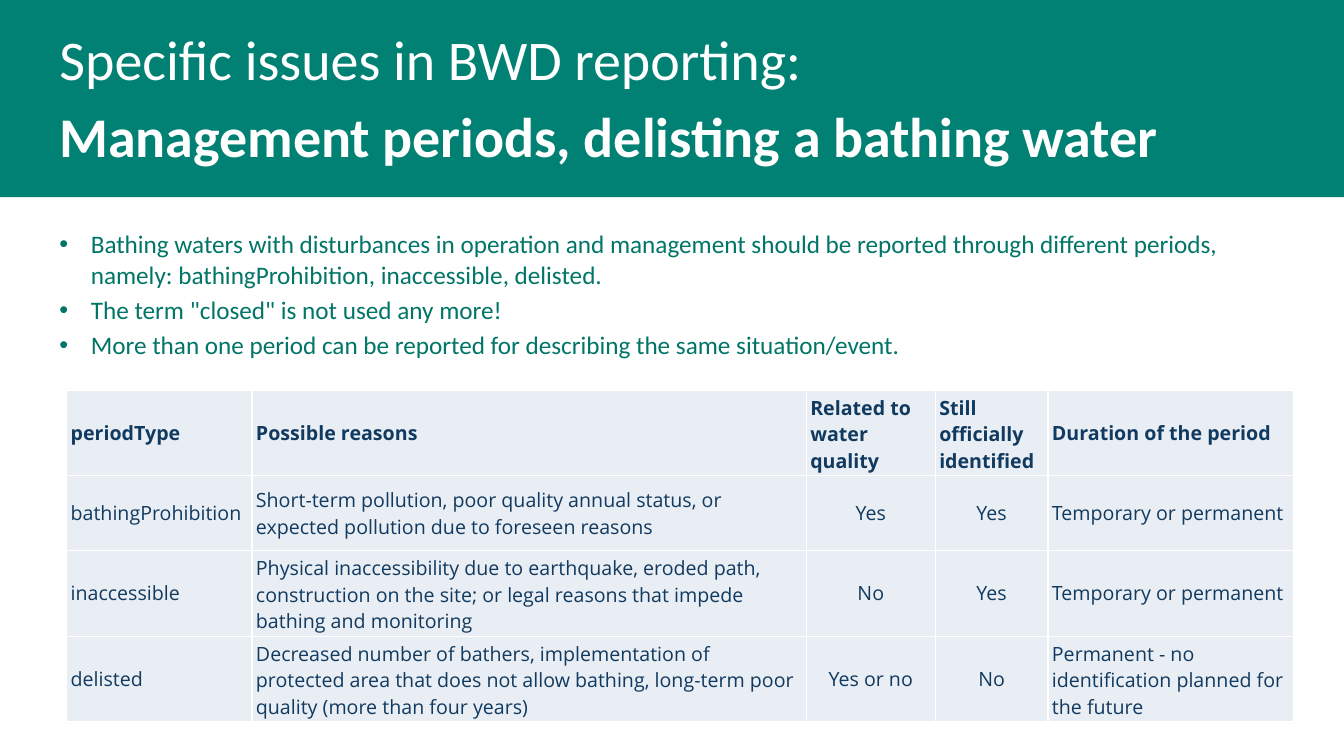
from dataclasses import dataclass

from lxml.etree import SubElement
from pptx import Presentation
from pptx.dml.color import RGBColor
from pptx.enum.shapes import MSO_SHAPE as Shape
from pptx.enum.text import MSO_ANCHOR as Anchor, PP_ALIGN as Align
from pptx.oxml.ns import qn
from pptx.util import Cm, Pt

GREEN, TEAL, NAVY = "008173", "017567", "113A60"
WHITE, PALE = "FFFFFF", "E9EDF4"


@dataclass
class Box:
    left: float
    top: float
    width: float
    height: float

    def place(self) -> tuple:
        return Cm(self.left), Cm(self.top), Cm(self.width), Cm(self.height)


@dataclass
class Period:
    name: str
    reason: str
    water: str
    listed: str
    length: str

    def cells(self) -> list[str]:
        return [self.name, self.reason, self.water, self.listed, self.length]


HEAD = Period("periodType", "Possible reasons", "Related to water quality",
              "Still officially identified", "Duration of the period")
PERIODS = [
    Period("bathingProhibition",
           "Short-term pollution, poor quality annual status, or expected "
           "pollution due to foreseen reasons",
           "Yes", "Yes", "Temporary or permanent"),
    Period("inaccessible",
           "Physical inaccessibility due to earthquake, eroded path, construction "
           "on the site; or legal reasons that impede bathing and monitoring",
           "No", "Yes", "Temporary or permanent"),
    Period("delisted",
           "Decreased number of bathers, implementation of protected area that does "
           "not allow bathing, long-term poor quality (more than four years)",
           "Yes or no", "No", "Permanent - no identification planned for the future"),
]
POINTS = [
    "Bathing waters with disturbances in operation and management should be reported "
    "through different periods, namely: bathingProhibition, inaccessible, delisted.",
    'The term "closed" is not used any more!',
    "More than one period can be reported for describing the same situation/event.",
]
WIDTHS = [4.67, 13.97, 3.25, 2.84, 6.2]
HEIGHTS = [2.16, 1.88, 2.16, 2.16]


def color(code: str) -> RGBColor:
    return RGBColor.from_string(code)


def write(para, text: str, *, size: float, font: str, ink: str, bold: bool = False,
          align=Align.LEFT, before: float = 0, bullet: bool = False) -> None:
    if bullet:
        props = para._p.get_or_add_pPr()
        props.set("marL", str(Cm(0.79)))
        props.set("indent", str(-Cm(0.79)))
        SubElement(props, qn("a:buFont"), typeface="Arial")
        SubElement(props, qn("a:buChar"), char="•")
    para.alignment = align
    para.space_before = Pt(before)
    run = para.add_run()
    run.text = text
    run.font.size, run.font.name, run.font.bold = Pt(size), font, bold
    run.font.color.rgb = color(ink)


def add_text(slide, box: Box, lines: list[tuple[str, bool]], before: float,
             **style) -> None:
    frame = slide.shapes.add_textbox(*box.place()).text_frame
    frame.word_wrap = True
    for i, (line, bold) in enumerate(lines):
        para = frame.add_paragraph() if i else frame.paragraphs[0]
        write(para, line, bold=bold, before=before if i else 0, **style)


def edge(cell) -> None:
    props = cell._tc.get_or_add_tcPr()
    for i, side in enumerate(("lnL", "lnR", "lnT", "lnB")):
        line = props.makeelement(qn(f"a:{side}"), {"w": str(Pt(1))})
        props.insert(i, line)
        fill = SubElement(line, qn("a:solidFill"))
        SubElement(fill, qn("a:srgbClr"), val=WHITE)


def add_grid(slide, left: float, top: float) -> None:
    rows = [HEAD, *PERIODS]
    box = Box(left, top, sum(WIDTHS), sum(HEIGHTS))
    grid = slide.shapes.add_table(len(rows), len(WIDTHS), *box.place()).table
    grid.horz_banding = False
    for col, width in zip(grid.columns, WIDTHS):
        col.width = Cm(width)
    for r, (row, height) in enumerate(zip(rows, HEIGHTS)):
        grid.rows[r].height = Cm(height)
        for c, text in enumerate(row.cells()):
            cell = grid.cell(r, c)
            cell.margin_left = cell.margin_right = Cm(0.1)
            cell.margin_top = cell.margin_bottom = Cm(0.1)
            cell.vertical_anchor = Anchor.MIDDLE
            cell.fill.solid()
            cell.fill.fore_color.rgb = color(PALE)
            edge(cell)
            mid = r > 0 and c in (2, 3)
            write(cell.text_frame.paragraphs[0], text, size=14, font="Open Sans",
                  ink=NAVY, bold=r == 0, align=Align.CENTER if mid else Align.LEFT)


def main() -> None:
    deck = Presentation()
    deck.slide_width, deck.slide_height = Cm(33.87), Cm(19.05)
    slide = deck.slides.add_slide(deck.slide_layouts[6])

    # Title band
    band = slide.shapes.add_shape(Shape.RECTANGLE, *Box(0, 0, 33.87, 4.97).place())
    band.shadow.inherit = False
    band.fill.solid()
    band.fill.fore_color.rgb = color(GREEN)
    band.line.fill.background()
    add_text(slide, Box(1.25, 0.5, 30.84, 3.68),
             [("Specific issues in BWD reporting:", False),
              ("Management periods, delisting a bathing water", True)],
             before=6.5, size=40, font="Calibri", ink=WHITE)

    # Key points
    add_text(slide, Box(1.25, 5.64, 31.72, 3.89), [(point, False) for point in POINTS],
             before=3.6, size=18, font="Calibri", ink=TEAL, bullet=True)

    # Period table
    add_grid(slide, 1.68, 9.83)
    deck.save("out.pptx")


if __name__ == "__main__":
    main()
